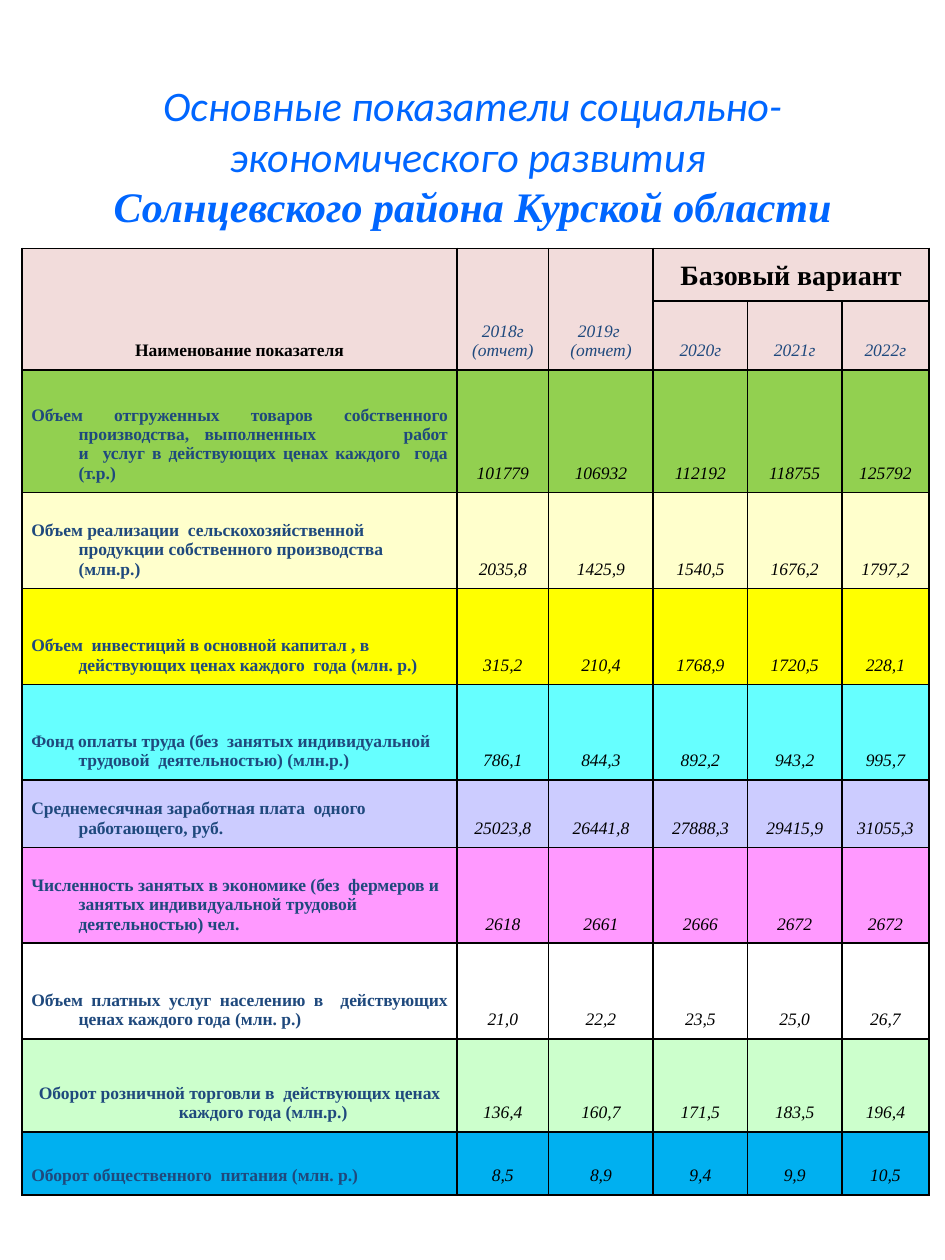
"""Build a slide with a table of district economic indicators."""
from lxml import etree
from pptx import Presentation
from pptx.dml.color import RGBColor
from pptx.enum import text as tx
from pptx.oxml import ns
from pptx.util import Pt

SERIF, BLUE, NAVY, BLACK = "Times New Roman", "0066FF", "1F497D", "000000"
ALIGN = {"l": tx.PP_ALIGN.LEFT, "c": tx.PP_ALIGN.CENTER, "j": tx.PP_ALIGN.JUSTIFY}
TITLE = [
    ("Основные показатели социально-экономического развития ", "Calibri", False),
    ("Солнцевского района Курской области", SERIF, True),
]
HEAD = "F2DCDB"
NAME, BASE = "Наименование показателя", "Базовый вариант"
PAST = ["2018г\n(отчет)", "2019г \n(отчет)"]
PLAN = ["2020г", "2021г", "2022г"]
DATA = [
    ("Объем отгруженных товаров собственного производства,\tвыполненных работ\vи  услуг в действующих ценах каждого  года (т.р.)",
     "j", "92D050", 70, "101779 106932 112192 118755 125792"),
    ("Объем реализации  сельскохозяйственной продукции собственного производства (млн.р.)",
     "l", "FFFFCC", 54.8, "2035,8 1425,9 1540,5 1676,2 1797,2"),
    ("Объем  инвестиций в основной капитал , в действующих ценах каждого  года (млн. р.)",
     "l", "FFFF00", 54.8, "315,2 210,4 1768,9 1720,5 228,1"),
    ("Фонд оплаты труда (без  занятых индивидуальной трудовой  деятельностью) (млн.р.)",
     "l", "66FFFF", 54.8, "786,1 844,3 892,2 943,2 995,7"),
    ("Среднемесячная заработная плата  одного работающего, руб.",
     "l", "CCCCFF", 38.4, "25023,8 26441,8 27888,3 29415,9 31055,3"),
    ("Численность занятых в экономике (без  фермеров и занятых индивидуальной трудовой  деятельностью) чел.",
     "l", "FF99FF", 54.8, "2618 2661 2666 2672 2672"),
    ("Объем платных услуг населению в  действующих ценах каждого года (млн. р.)",
     "j", "FFFFFF", 54.8, "21,0 22,2 23,5 25,0 26,7"),
    ("Оборот розничной торговли в  действующих ценах каждого года (млн.р.)",
     "c", "CCFFCC", 53, "136,4 160,7 171,5 183,5 196,4"),
    ("Оборот общественного  питания (млн. р.)",
     "j", "00B0F0", 36, "8,5 8,9 9,4 9,9 10,5"),
]
COLS = [248.6, 52.4, 59.8, 53.9, 32.4, 21.5, 15.1, 34.7]
ROWS = [63.4, 56.2, 30.2, 39.4] + [row[3] for row in DATA]
HUES = [None, None, HEAD, HEAD] + [row[2] for row in DATA]
SIDES = ["", "B"] + ["LRTB"] * (len(ROWS) - 2)
SPOTS = [0, 1, 2, 3, 4, 6]
SPANS = [(0, 0, 0, 7), (1, 3, 1, 4), (1, 5, 1, 6), (2, 3, 2, 7)]
SPANS += [(2, col, 3, col) for col in range(3)]
SPANS += [(row, col, row, col + 1) for row in range(3, len(ROWS)) for col in (4, 6)]
LEFT, TOP, PAD, HANG, STOP = 12.5, 22.3, 5.4, 27, 117


def paint(hue):
    return RGBColor.from_string(hue)


def style(run, font=SERIF, size=10, hue=BLACK, bold=False, ital=False):
    run.font.name, run.font.size = font, Pt(size)
    run.font.bold, run.font.italic = bold, ital
    run.font.color.rgb = paint(hue)


def write(frame, words, align="c", hang=0, **look):
    for num, line in enumerate(words.split("\n")):
        para = frame.add_paragraph() if num else frame.paragraphs[0]
        para.alignment = ALIGN[align]
        props = para._p.get_or_add_pPr()
        if hang:
            props.set("marL", str(Pt(hang)))
            props.set("indent", str(-Pt(hang)))
        if "\t" in line:
            tabs = etree.SubElement(props, ns.qn("a:tabLst"))
            etree.SubElement(tabs, ns.qn("a:tab"), pos=str(Pt(STOP)), algn="l")
        for part, piece in enumerate(line.split("\v")):
            if part:
                para.add_line_break()
            run = para.add_run()
            run.text = piece
            style(run, **look)


def dress(cell, hue, sides):
    cell.margin_left = cell.margin_right = Pt(PAD)
    cell.margin_top = cell.margin_bottom = Pt(PAD)
    cell.vertical_anchor = tx.MSO_ANCHOR.BOTTOM
    props = cell._tc.get_or_add_tcPr()
    for side in "LRTB":
        edge = etree.SubElement(props, ns.qn(f"a:ln{side}"), w=str(Pt(1)))
        kind = "solidFill" if side in sides else "noFill"
        fill = etree.SubElement(edge, ns.qn(f"a:{kind}"))
        if side in sides:
            etree.SubElement(fill, ns.qn("a:srgbClr"), val=BLACK)
    if hue:
        cell.fill.solid()
        cell.fill.fore_color.rgb = paint(hue)
    else:
        cell.fill.background()


def add_title(slide):
    frame = slide.shapes.add_textbox(Pt(27), Pt(28.8), Pt(486), Pt(120.2)).text_frame
    frame.word_wrap = True
    frame.vertical_anchor = tx.MSO_ANCHOR.MIDDLE
    para = frame.paragraphs[0]
    para.alignment = ALIGN["c"]
    for num, (words, font, bold) in enumerate(TITLE):
        if num:
            para.add_line_break()
        run = para.add_run()
        run.text = words
        style(run, font, 24, BLUE, bold, True)


def add_grid(slide):
    grid = slide.shapes.add_table(len(ROWS), len(COLS), Pt(LEFT), Pt(TOP),
                                  Pt(sum(COLS)), Pt(sum(ROWS))).table
    grid.first_row = grid.horz_banding = False
    for col, wide in zip(grid.columns, COLS):
        col.width = Pt(wide)
    for row, high, hue, sides in zip(grid.rows, ROWS, HUES, SIDES):
        row.height = Pt(high)
        for cell in row.cells:
            dress(cell, hue, sides)
    for top, left, low, right in SPANS:
        grid.cell(top, left).merge(grid.cell(low, right))

    write(grid.cell(2, 0).text_frame, NAME, bold=True)
    write(grid.cell(2, 3).text_frame, BASE, size=16, bold=True)
    for col, words in zip(SPOTS[1:], PAST + PLAN):
        cell = grid.cell(2 if col < 3 else 3, col)
        write(cell.text_frame, words, hue=NAVY, ital=True)

    for row, (name, align, _, _, nums) in enumerate(DATA, 4):
        write(grid.cell(row, 0).text_frame, name, align, HANG, hue=NAVY, bold=True)
        for col, num in zip(SPOTS[1:], nums.split()):
            write(grid.cell(row, col).text_frame, num, ital=True)


def main():
    deck = Presentation()
    deck.slide_width, deck.slide_height = Pt(540), Pt(720)
    slide = deck.slides.add_slide(deck.slide_layouts[6])
    add_title(slide)
    add_grid(slide)
    deck.save("out.pptx")


if __name__ == "__main__":
    main()
